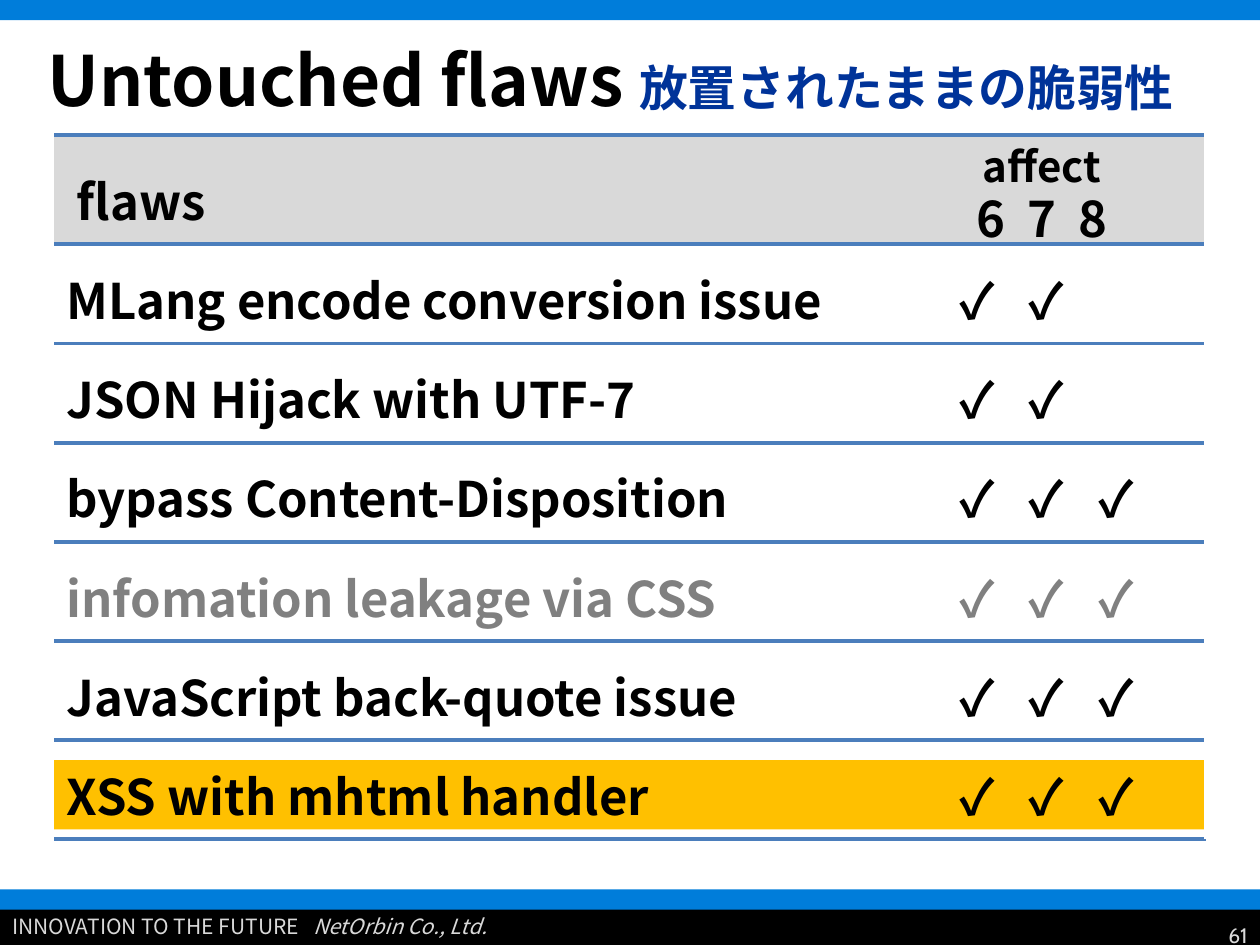
import pptx
import pptx.dml.color
import pptx.enum.shapes
import pptx.enum.text
import pptx.oxml.ns
import pptx.util
from lxml import etree

# Content
TITLE = [("Untouched flaws ", "title", "ink"), ("放置されたままの脆弱性", "subtitle", "navy")]
HEADINGS = {"flaws": "flaws", "affect": "affect", "versions": "6  7  8"}
FLAWS = [  # flaw, colour, number of affected versions
    ("MLang encode conversion issue", "ink", 2),
    ("JSON Hijack with UTF-7", "ink", 2),
    ("bypass Content-Disposition", "ink", 3),
    ("infomation leakage via CSS", "muted", 3),
    ("JavaScript back-quote issue", "ink", 3),
    ("XSS with mhtml handler", "ink", 3),
]
SLOGAN, COMPANY = "INNOVATION TO THE FUTURE   ", "NetOrbin Co., Ltd."
PAGE_NUMBER = "61"

THEME = {
    "font": "Noto Sans CJK JP", "number_font": "Cabin",
    "colors": {"ink": "000000", "muted": "808080", "navy": "003399", "band": "007DDA",
               "pale": "D9D9D9", "highlight": "FFC000", "rule": "4B7EBC", "paper": "FFFFFF"},
    "sizes": {"title": 39.6, "subtitle": 27.9, "body": 28, "label": 24, "footer": 12},
    "rule_width": 2.25,
}

# Grid, in inches
WIDTH, HEIGHT = 10, 7.5
LEFT, RIGHT = 0.43, 9.57
HEAD_TOP, BODY_TOP, BODY_BOTTOM = 1.07, 1.94, 6.66
ROW = (BODY_BOTTOM - BODY_TOP) / len(FLAWS)
TEXT_DROP, TEXT_HEIGHT = 0.16, 0.57
MARK_LEFT, MARK_STEP, MARK_WIDTH = 7.36, 0.55, 0.79
VERSIONS_LEFT, VERSIONS_WIDTH = 7.05, 2.44
BAND = 0.16

deck = pptx.Presentation()
deck.slide_width, deck.slide_height = pptx.util.Inches(WIDTH), pptx.util.Inches(HEIGHT)
slide = deck.slides.add_slide(deck.slide_layouts[6])


def color(name):
    return pptx.dml.color.RGBColor.from_string(THEME["colors"][name])


def inches(*lengths):
    return [pptx.util.Inches(length) for length in lengths]


def add_text(text, at, size="body", ink="ink", bold=True, italic=False,
             align="LEFT", anchor="TOP", font=THEME["font"]):
    """Text is a string, or a list of (string, size, colour[, italic]) runs."""
    frame = slide.shapes.add_textbox(*inches(*at)).text_frame
    frame.word_wrap = True
    frame.vertical_anchor = getattr(pptx.enum.text.MSO_ANCHOR, anchor)
    paragraph = frame.paragraphs[0]
    paragraph.alignment = getattr(pptx.enum.text.PP_ALIGN, align)
    runs = [(text, size, ink)] if isinstance(text, str) else text
    for words, run_size, run_ink, *slant in runs:
        run = paragraph.add_run()
        run.text = words
        run.font.name = font
        run.font.size = pptx.util.Pt(THEME["sizes"][run_size])
        run.font.bold = bold
        run.font.italic = slant[0] if slant else italic
        run.font.color.rgb = color(run_ink)
        # Japanese text takes its typeface from the East Asian slot
        east_asian = etree.SubElement(run.font._element, pptx.oxml.ns.qn("a:ea"))
        east_asian.set("typeface", font)


def add_bar(fill, *at):
    bar = slide.shapes.add_shape(pptx.enum.shapes.MSO_SHAPE.RECTANGLE, *inches(*at))
    bar.shadow.inherit = False
    bar.fill.solid()
    bar.fill.fore_color.rgb = color(fill)
    bar.line.fill.background()


def add_rule(x1, y1, x2, y2, ink="rule"):
    rule = slide.shapes.add_connector(
        pptx.enum.shapes.MSO_CONNECTOR.STRAIGHT, *inches(x1, y1, x2, y2))
    rule.line.color.rgb = color(ink)
    rule.line.width = pptx.util.Pt(THEME["rule_width"])
    etree.SubElement(rule._element.spPr, pptx.oxml.ns.qn("a:effectLst"))


# Page frame and footer
add_bar("band", 0, 0, WIDTH, BAND)
add_bar("ink", 0, 7.14, WIDTH, 0.36)
add_text([(SLOGAN, "footer", "pale"), (COMPANY, "footer", "pale", True)],
         (0, 7.2, 7.32, 0.3), bold=False)
add_bar("band", 0, 7.06, WIDTH, BAND)
add_text(PAGE_NUMBER, (7.67, 7.24, 2.33, 0.36), size="footer", ink="pale", bold=False,
         align="RIGHT", anchor="MIDDLE", font=THEME["number_font"])

# Title
add_text(TITLE, (0.28, 0, 9.72, 1.25), anchor="MIDDLE")

# Header row and highlight of the last flaw
last_top = BODY_BOTTOM - ROW
add_bar("pale", LEFT, HEAD_TOP, RIGHT - LEFT, BODY_TOP - HEAD_TOP)
add_bar("highlight", LEFT, last_top + TEXT_DROP, RIGHT - LEFT, 0.55)
add_text(HEADINGS["flaws"], (0.51, 1.31, 3.15, TEXT_HEIGHT))
add_text(HEADINGS["affect"], (VERSIONS_LEFT, HEAD_TOP, VERSIONS_WIDTH, 0.5),
         size="label", align="CENTER")
add_text(HEADINGS["versions"], (VERSIONS_LEFT, 1.45, VERSIONS_WIDTH, TEXT_HEIGHT),
         align="CENTER")

# Rules, trimmed at the right edge
for y in [HEAD_TOP] + [BODY_TOP + ROW * i for i in range(len(FLAWS) + 1)]:
    add_rule(LEFT, y, RIGHT, y)
add_rule(RIGHT, 0.92, RIGHT, BODY_BOTTOM, ink="paper")

# Flaws with a check mark per affected version
for row, (flaw, ink, affected) in enumerate(FLAWS):
    top = BODY_TOP + ROW * row + TEXT_DROP
    add_text(flaw, (LEFT, top, MARK_LEFT - LEFT, TEXT_HEIGHT), ink=ink)
    for version in range(affected):
        add_text("✓", (MARK_LEFT + MARK_STEP * version, top, MARK_WIDTH, TEXT_HEIGHT),
                 ink=ink, align="CENTER")

deck.save("out.pptx")
